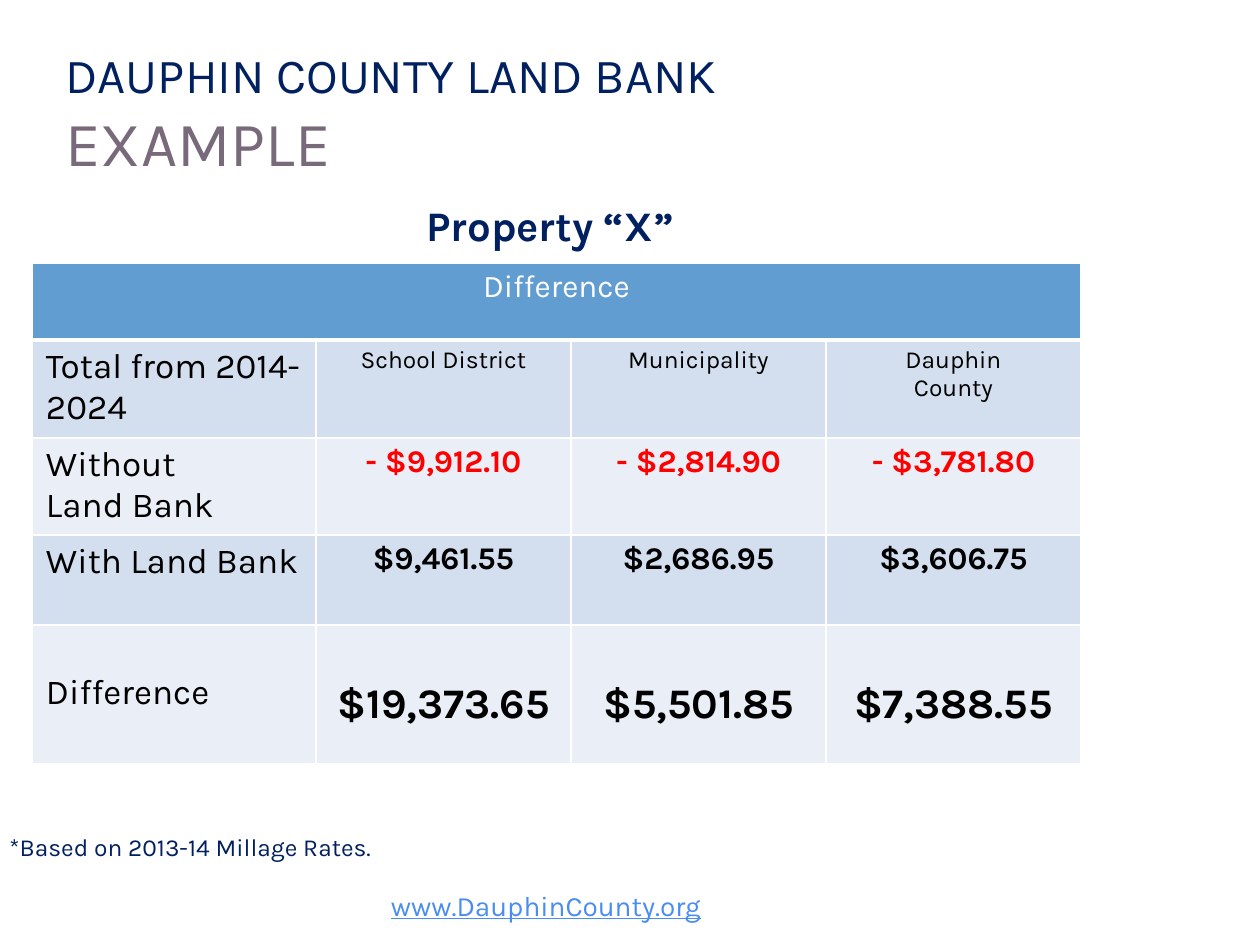
"""Build the land bank example slide with its property comparison table."""
from dataclasses import dataclass

from lxml import etree
from pptx import Presentation
from pptx.dml.color import RGBColor
from pptx.enum import text
from pptx.oxml import ns
from pptx.util import Emu, Pt


@dataclass(frozen=True)
class Theme:
    font: str = "Karla"
    navy: str = "002060"
    plum: str = "78697B"
    link: str = "498DF1"
    header: str = "629DD1"
    bands: tuple = ("D3DFEE", "EAEFF7")
    white: str = "FFFFFF"
    black: str = "000000"
    red: str = "FF0000"
    note: int = 14
    web: int = 16
    figure: int = 18
    label: int = 20
    large: int = 24
    title: int = 28
    subtitle: int = 36


theme = Theme()
PX = 914400 / 126
LEFT, CENTER = text.PP_ALIGN.LEFT, text.PP_ALIGN.CENTER


def px(*lengths):
    return [Emu(round(length * PX)) for length in lengths]


def write(para, words, size, color, bold=False, underline=False, align=LEFT, spacing=1.0):
    para.alignment = align
    para.line_spacing = spacing
    span = para.add_run()
    span.text = words
    span.font.name = theme.font
    span.font.size = Pt(size)
    span.font.bold = bold
    span.font.underline = underline
    span.font.color.rgb = RGBColor.from_string(color)


deck = Presentation()
deck.slide_width, deck.slide_height = px(1260, 945)
page = deck.slides.add_slide(deck.slide_layouts[5])

title = page.shapes.title
title.left, title.top, title.width, title.height = px(53, 32, 1155, 160)
title.text_frame.vertical_anchor = text.MSO_ANCHOR.MIDDLE
title.text_frame.word_wrap = True
para = title.text_frame.paragraphs[0]
write(para, "DAUPHIN COUNTY LAND BANK", theme.title, theme.navy)
para.add_line_break()
line_break = para._p.find(ns.qn("a:br"))
etree.SubElement(line_break, ns.qn("a:rPr"), sz=str(theme.subtitle * 100))
write(para, "EXAMPLE", theme.subtitle, theme.plum)

captions = [
    ((0, 882, 1092, 47), "www.DauphinCounty.org",
     dict(size=theme.web, color=theme.link, underline=True, align=CENTER)),
    ((-3, 829, 1103, 83), "*Based on 2013-14 Millage Rates.",
     dict(size=theme.note, color=theme.navy, spacing=0.9)),
    ((4, 199, 1092, 39), "Property “X”",
     dict(size=theme.large, color=theme.navy, bold=True, align=CENTER, spacing=0.9)),
]
for place, words, style in captions:
    box = page.shapes.add_textbox(*px(*place))
    box.text_frame.word_wrap = True
    write(box.text_frame.paragraphs[0], words, **style)

rows = [
    ["Difference"],
    ["Total from 2014-2024", "School District", "Municipality", "Dauphin\nCounty"],
    ["Without\nLand Bank", "- $9,912.10", "- $2,814.90", "- $3,781.80"],
    ["With Land Bank", "$9,461.55", "$2,686.95", "$3,606.75"],
    ["Difference", "$19,373.65", "$5,501.85", "$7,388.55"],
]
heights = [77, 98, 97, 90, 139]
widths = [284, 255, 255, 255]
label_style = dict(size=theme.label, color=theme.black)
value_styles = [
    dict(size=theme.figure, color=theme.white),
    dict(size=theme.note, color=theme.black),
    dict(size=theme.figure, color=theme.red, bold=True),
    dict(size=theme.figure, color=theme.black, bold=True),
    dict(size=theme.large, color=theme.black, bold=True),
]

table = page.shapes.add_table(
    len(rows), len(widths), *px(32, 263, sum(widths), sum(heights))).table
table.first_row = table.horz_banding = False
for column, width in zip(table.columns, px(*widths)):
    column.width = width
for row, height in zip(table.rows, px(*heights)):
    row.height = height
table.cell(0, 0).merge(table.cell(0, len(widths) - 1))

for r, height in enumerate(heights):
    for c, width in enumerate(widths):
        cell = table.cell(r, c)
        properties = cell._tc.get_or_add_tcPr()
        for side in ("lnL", "lnR", "lnT", "lnB"):
            points = 3 if r == 0 and side == "lnB" else 1
            border = etree.SubElement(properties, ns.qn(f"a:{side}"), w=str(Pt(points)))
            fill = etree.SubElement(border, ns.qn("a:solidFill"))
            etree.SubElement(fill, ns.qn("a:srgbClr"), val=theme.white)
        cell.fill.solid()
        color = theme.bands[(r - 1) % 2] if r else theme.header
        cell.fill.fore_color.rgb = RGBColor.from_string(color)
        if cell.is_spanned:
            continue
        is_label = c == 0 and r > 0
        style = label_style if is_label else value_styles[r]
        top = (47 if is_label else 55) if r == len(rows) - 1 else 6
        cell.margin_left, cell.margin_right, cell.margin_top, cell.margin_bottom = px(
            14, 14, top, 6)
        for i, words in enumerate(rows[r][c].split("\n")):
            para = cell.text_frame.add_paragraph() if i else cell.text_frame.paragraphs[0]
            write(para, words, align=LEFT if is_label else CENTER, **style)

deck.save("out.pptx")
